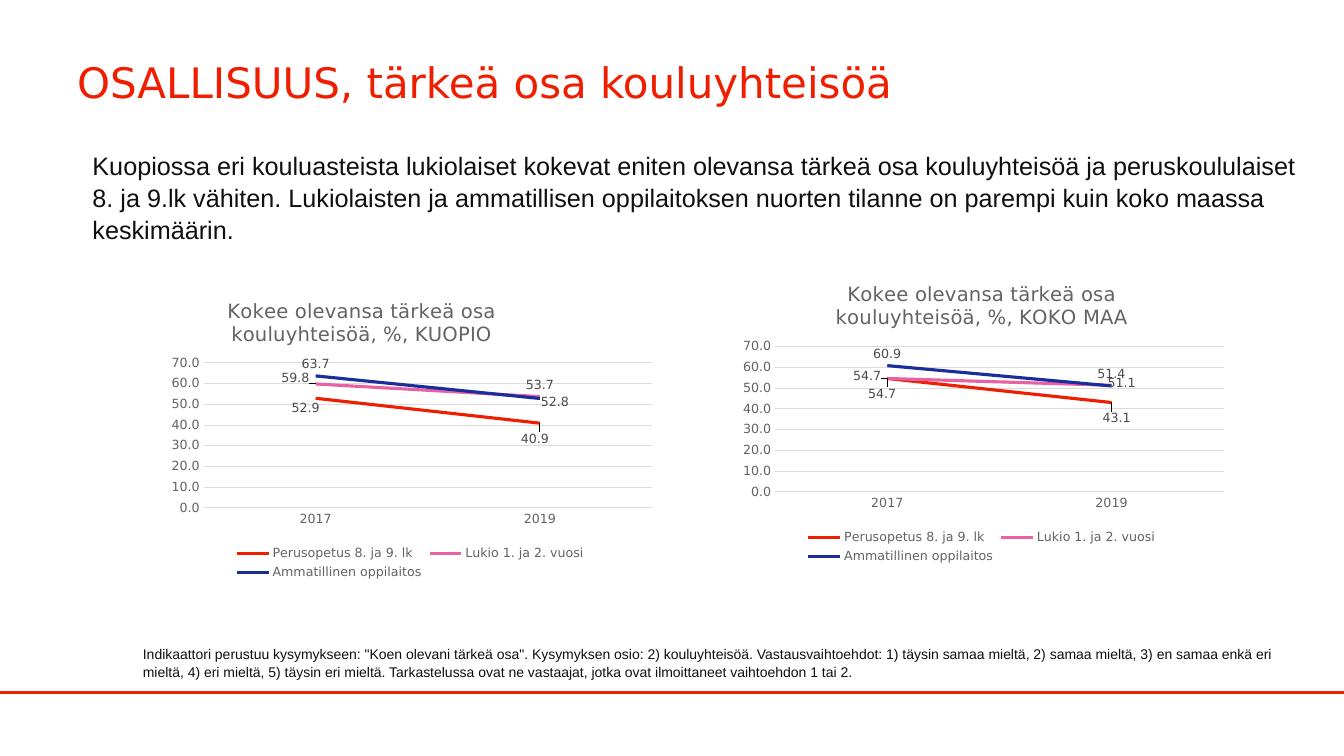
"""Build a slide comparing school belonging in Kuopio and the whole country."""
from dataclasses import dataclass

from lxml import etree
from pptx import Presentation
from pptx import oxml
from pptx.chart import data
from pptx.dml.color import RGBColor
from pptx.enum import chart as ch
from pptx.enum import shapes, text
from pptx.oxml import ns
from pptx.util import Pt

RED = RGBColor(0xF0, 0x1E, 0x00)
PINK = RGBColor(0xE9, 0x61, 0xA5)
BLUE = RGBColor(0x19, 0x2D, 0x9B)
INK = RGBColor(0x0F, 0x0F, 0x0F)
GREY = RGBColor(0x63, 0x63, 0x63)
LABEL = RGBColor(0x4B, 0x4B, 0x4B)
GRID = RGBColor(0xDB, 0xDB, 0xDB)
HEAD_FONT = "DejaVu Sans"
BODY_FONT = "Arial"
YEARS = ("2017", "2019")
SCHOOLS = (
    ("Perusopetus 8. ja 9. lk", RED),
    ("Lukio 1. ja 2. vuosi", PINK),
    ("Ammatillinen oppilaitos", BLUE),
)


@dataclass(frozen=True)
class TrendChart:
    """One line chart; offsets move labels as fractions of the chart."""
    area: str
    left: float
    top: float
    values: tuple
    offsets: tuple
    title_at: tuple | None = None


CHARTS = (
    TrendChart("KOKO MAA", 521.3, 189.4,
               ((54.7, 43.1), (54.7, 51.4), (60.9, 51.1)),
               (((-0.01, 0.09), (0.01, 0.09)),
                ((-0.04, 0.03), None),
                (None, (0.02, 0.03)))),
    TrendChart("KUOPIO", 113, 200.9,
               ((52.9, 40.9), (59.8, 53.7), (63.7, 52.8)),
               (((-0.02, 0.07), (-0.01, 0.09)),
                ((-0.04, 0.02), None),
                (None, (0.03, 0.05))),
               (0.13, 0.04)),
)


def style_font(font, size: float, color: RGBColor, name: str = HEAD_FONT) -> None:
    """Set size, colour and typeface without bold."""
    font.size, font.name, font.bold = Pt(size), name, False
    font.color.rgb = color


def add_text(s, words: str, *, left: float, top: float, width: float,
             height: float, size: float, font: str = BODY_FONT,
             color: RGBColor = INK, anchor=text.MSO_ANCHOR.TOP,
             spacing: float = 1.05) -> None:
    """Add a wrapped text box holding one paragraph."""
    sp = s.shapes.add_textbox(Pt(left), Pt(top), Pt(width), Pt(height))
    tf = sp.text_frame
    tf.word_wrap = True
    tf.vertical_anchor = anchor
    p = tf.paragraphs[0]
    p.line_spacing = spacing
    r = p.add_run()
    r.text = words
    style_font(r.font, size, color, font)


def make_layout(**parts):
    """Return a manual chart layout element."""
    body = "".join(f'<c:{tag} val="{val}"/>' for tag, val in parts.items())
    return oxml.parse_xml(f'<c:layout {ns.nsdecls("c")}><c:manualLayout>{body}'
                          '</c:manualLayout></c:layout>')


def style_axes(chart) -> None:
    """Format both axes and the gridlines."""
    for axis in (chart.category_axis, chart.value_axis):
        axis.major_tick_mark = axis.minor_tick_mark = ch.XL_TICK_MARK.NONE
        style_font(axis.tick_labels.font, 9, GREY)
    line = chart.category_axis.format.line
    line.color.rgb, line.width = GRID, Pt(0.75)
    axis = chart.value_axis
    axis.minimum_scale, axis.maximum_scale, axis.major_unit = 0, 70, 10
    axis.tick_labels.number_format = "0.0"
    axis.tick_labels.number_format_is_linked = False
    axis.format.line.fill.background()
    line = axis.major_gridlines.format.line
    line.color.rgb, line.width = GRID, Pt(0.75)


def style_series(chart, spec: TrendChart) -> None:
    """Colour the lines and place their value labels."""
    elements = chart.element.xpath(".//c:ser")
    for series, element, (_, color), shifts in zip(
            chart.plots[0].series, elements, SCHOOLS, spec.offsets):
        series.smooth = False
        series.marker.style = ch.XL_MARKER_STYLE.NONE
        series.format.line.color.rgb = color
        series.format.line.width = Pt(2.25)
        labels = series.data_labels
        labels.show_value = True
        labels.number_format = "0.0"
        labels.number_format_is_linked = False
        labels.position = ch.XL_LABEL_POSITION.ABOVE
        style_font(labels.font, 9, LABEL)
        for i, shift in enumerate(shifts):
            if shift:
                label = series.points[i].data_label
                label.position = ch.XL_LABEL_POSITION.ABOVE
                style_font(label.font, 9, LABEL)
                node = element.xpath(f"c:dLbls/c:dLbl[c:idx/@val='{i}']")[0]
                node.insert(1, make_layout(x=shift[0], y=shift[1]))


def add_trend(s, spec: TrendChart) -> None:
    """Add one titled line chart with its legend."""
    cd = data.CategoryChartData(number_format="0.0")
    cd.categories = YEARS
    for (name, _), values in zip(SCHOOLS, spec.values):
        cd.add_series(name, values)
    chart = s.shapes.add_chart(ch.XL_CHART_TYPE.LINE, Pt(spec.left),
                               Pt(spec.top), Pt(360), Pt(216), cd).chart
    style_font(chart.font, 10, INK)
    chart.plots[0].vary_by_categories = False
    chart.has_title = True
    r = chart.chart_title.text_frame.paragraphs[0].add_run()
    r.text = f"Kokee olevansa tärkeä osa kouluyhteisöä, %, {spec.area}"
    style_font(r.font, 14, GREY)
    chart.chart_title.include_in_layout = False
    if spec.title_at:
        title = chart.element.xpath(".//c:title")[0]
        for old in title.xpath("c:layout"):
            title.remove(old)
        x, y = spec.title_at
        title.xpath("c:tx")[0].addnext(
            make_layout(xMode="edge", yMode="edge", x=x, y=y))
    chart.has_legend = True
    chart.legend.position = ch.XL_LEGEND_POSITION.BOTTOM
    chart.legend.include_in_layout = False
    style_font(chart.legend.font, 9, GREY)
    plot = chart.element.xpath(".//c:plotArea")[0]
    for old in plot.xpath("c:layout"):
        plot.remove(old)
    plot.insert(0, make_layout(layoutTarget="inner", xMode="edge", yMode="edge",
                               x=0.09, y=0.27, w=0.89, h=0.48))
    style_axes(chart)
    style_series(chart, spec)


def add_rule(s) -> None:
    """Draw the red line across the foot of the slide."""
    line = s.shapes.add_connector(shapes.MSO_CONNECTOR.STRAIGHT,
                                  Pt(0), Pt(494.6), Pt(960), Pt(494.6))
    line.line.color.rgb, line.line.width = RED, Pt(2)
    etree.SubElement(line._element.spPr, ns.qn("a:effectLst"))


def main() -> None:
    """Build and save the slide."""
    prs = Presentation()
    prs.slide_width, prs.slide_height = Pt(960), Pt(540)
    s = prs.slides.add_slide(prs.slide_layouts[6])
    add_rule(s)
    add_text(s, "OSALLISUUS, tärkeä osa kouluyhteisöä", left=48, top=21.6,
             width=864, height=73.4, size=30, font=HEAD_FONT, color=RED,
             anchor=text.MSO_ANCHOR.MIDDLE, spacing=1.0)
    for spec in CHARTS:
        add_trend(s, spec)
    add_text(s, 'Indikaattori perustuu kysymykseen: "Koen olevani tärkeä osa". '
             "Kysymyksen osio: 2) kouluyhteisöä. Vastausvaihtoehdot: 1) täysin "
             "samaa mieltä, 2) samaa mieltä, 3) en samaa enkä eri mieltä, "
             "4) eri mieltä, 5) täysin eri mieltä. Tarkastelussa ovat ne "
             "vastaajat, jotka ovat ilmoittaneet vaihtoehdon 1 tai 2.",
             left=95, top=457.2, width=832.3, height=31.7, size=10)
    add_text(s, "Kuopiossa eri kouluasteista lukiolaiset kokevat eniten olevansa "
             "tärkeä osa kouluyhteisöä ja peruskoululaiset 8. ja 9.lk vähiten. "
             "Lukiolaisten ja ammatillisen oppilaitoksen nuorten tilanne on "
             "parempi kuin koko maassa keskimäärin.",
             left=59, top=103, width=882.7, height=72.7, size=18)
    prs.save("out.pptx")


if __name__ == "__main__":
    main()
